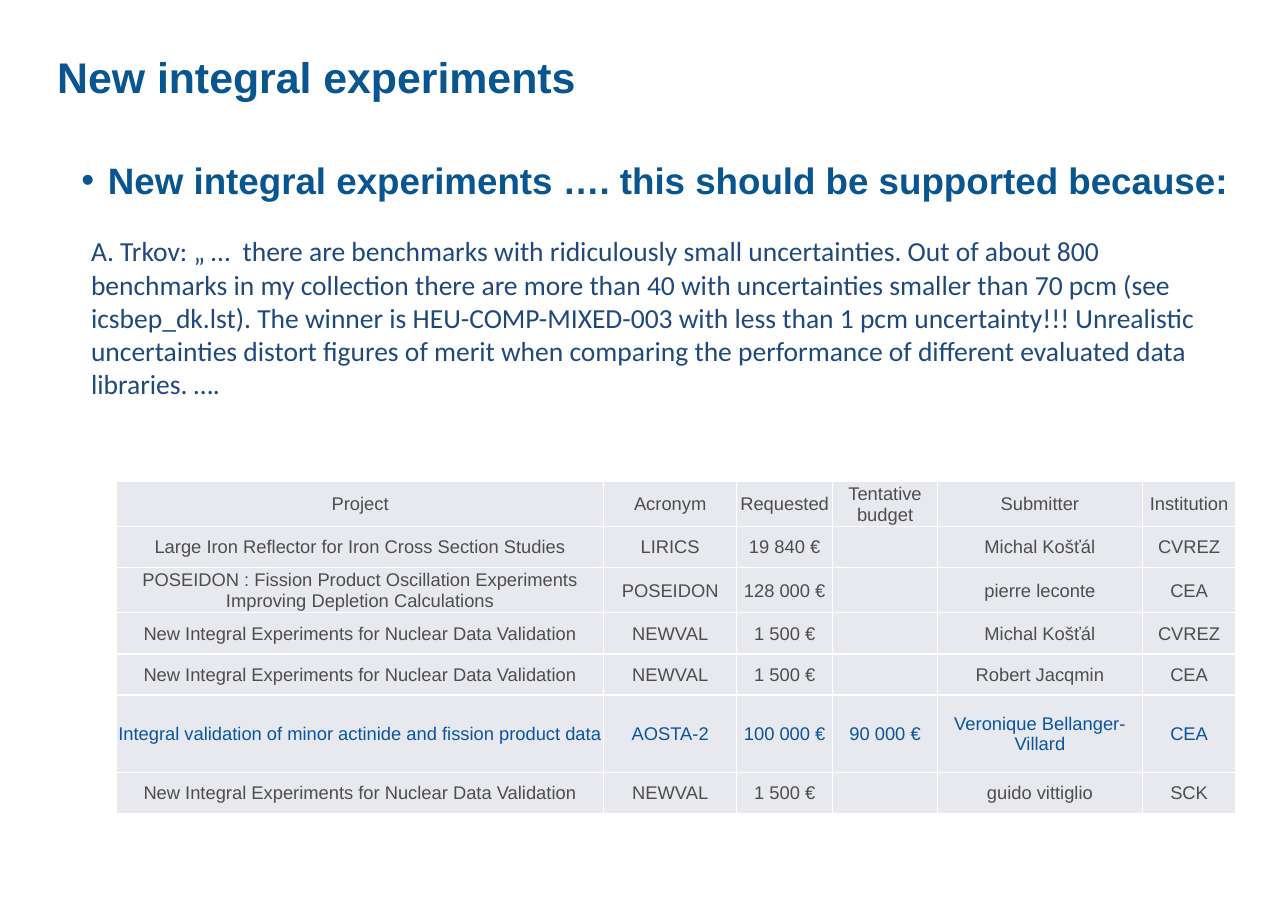
import dataclasses

import lxml.etree
import pptx
import pptx.dml.color
import pptx.enum.text
import pptx.oxml.ns
import pptx.util

Cm = pptx.util.Cm
Pt = pptx.util.Pt
Color = pptx.dml.color.RGBColor.from_string
Align = pptx.enum.text.PP_ALIGN
Anchor = pptx.enum.text.MSO_ANCHOR
qualified = pptx.oxml.ns.qn


@dataclasses.dataclass(frozen=True)
class Theme:
    heading: str = "08558F"
    quote: str = "1F497D"
    cell_text: str = "4D4D4D"
    funded_text: str = "0854A0"
    cell_fill: str = "E7E9EE"
    border: str = "FFFFFF"
    title_size: int = 28
    bullet_size: int = 24
    quote_size: int = 18
    cell_size: int = 12


theme = Theme()


def write(frame, text, *, size, color, font="Arial", bold=False,
          align=Align.LEFT, anchor=Anchor.TOP, bullet=None):
    frame.word_wrap = True
    frame.vertical_anchor = anchor
    para = frame.paragraphs[0]
    para.alignment = align
    if bullet:
        properties = para._p.get_or_add_pPr()
        properties.set("marL", str(Cm(0.61)))
        properties.set("indent", str(-Cm(0.61)))
        lxml.etree.SubElement(properties, qualified("a:buFont"), typeface=font)
        lxml.etree.SubElement(properties, qualified("a:buChar"), char=bullet)
    span = para.add_run()
    span.text = text
    span.font.name = font
    span.font.size = Pt(size)
    span.font.bold = bold
    span.font.color.rgb = Color(color)


def draw_borders(cell, color, width):
    properties = cell._tc.get_or_add_tcPr()
    for side in ("lnL", "lnR", "lnT", "lnB"):
        line = lxml.etree.SubElement(properties, qualified(f"a:{side}"), w=str(width))
        fill = lxml.etree.SubElement(line, qualified("a:solidFill"))
        lxml.etree.SubElement(fill, qualified("a:srgbClr"), val=color)


deck = pptx.Presentation()
deck.slide_width = Cm(29.7)
deck.slide_height = Cm(21)
page = deck.slides.add_slide(deck.slide_layouts[6])

# Heading and quotation
title_box = page.shapes.add_textbox(Cm(1.04), Cm(1.09), Cm(24.61), Cm(1.35))
title_box.text_frame.margin_left = title_box.text_frame.margin_right = Cm(0.28)
write(title_box.text_frame, "New integral experiments", size=theme.title_size,
      color=theme.heading, bold=True, anchor=Anchor.MIDDLE)

bullet_box = page.shapes.add_textbox(Cm(1.63), Cm(3.51), Cm(27.03), Cm(1.8))
write(bullet_box.text_frame,
      "New integral experiments …. this should be supported because:",
      size=theme.bullet_size, color=theme.heading, bold=True, bullet="•")

quote_box = page.shapes.add_textbox(Cm(1.85), Cm(5.28), Cm(26.72), Cm(4.11))
write(quote_box.text_frame,
      "A. Trkov: „ …  there are benchmarks with ridiculously small uncertainties. "
      "Out of about 800 benchmarks in my collection there are more than 40 with "
      "uncertainties smaller than 70 pcm (see icsbep_dk.lst). The winner is "
      "HEU-COMP-MIXED-003 with less than 1 pcm uncertainty!!! Unrealistic "
      "uncertainties distort figures of merit when comparing the performance of "
      "different evaluated data libraries. ….",
      size=theme.quote_size, color=theme.quote, font="Calibri")

# Project table
validation = "New Integral Experiments for Nuclear Data Validation"
projects = [
    ("Project", "Acronym", "Requested", "Tentative budget", "Submitter", "Institution"),
    ("Large Iron Reflector for Iron Cross Section Studies", "LIRICS", "19 840 €", "",
     "Michal Košťál", "CVREZ"),
    ("POSEIDON : Fission Product Oscillation Experiments Improving Depletion Calculations",
     "POSEIDON", "128 000 €", "", "pierre leconte", "CEA"),
    (validation, "NEWVAL", "1 500 €", "", "Michal Košťál", "CVREZ"),
    (validation, "NEWVAL", "1 500 €", "", "Robert Jacqmin", "CEA"),
    ("Integral validation of minor actinide and fission product data", "AOSTA-2",
     "100 000 €", "90 000 €", "Veronique Bellanger-Villard", "CEA"),
    (validation, "NEWVAL", "1 500 €", "", "guido vittiglio", "SCK"),
]
column_widths = [11.23, 3.07, 2.21, 2.42, 4.72, 2.16]
row_heights = [1.03, 0.95, 1.03, 0.95, 0.95, 1.78, 0.95]
funded_row = 5

table = page.shapes.add_table(
    len(projects), len(column_widths), Cm(2.69), Cm(11.1),
    Cm(sum(column_widths)), Cm(sum(row_heights))).table
for column, width in zip(table.columns, column_widths):
    column.width = Cm(width)

for row_index, (row, height, values) in enumerate(zip(table.rows, row_heights, projects)):
    row.height = Cm(height)
    color = theme.funded_text if row_index == funded_row else theme.cell_text
    for cell, value in zip(row.cells, values):
        draw_borders(cell, theme.border, Pt(1))
        cell.fill.solid()
        cell.fill.fore_color.rgb = Color(theme.cell_fill)
        cell.margin_left = cell.margin_right = cell.margin_top = Cm(0.02)
        cell.margin_bottom = 0
        cell.vertical_anchor = Anchor.MIDDLE
        if value:
            write(cell.text_frame, value, size=theme.cell_size, color=color,
                  align=Align.CENTER, anchor=None)

deck.save("out.pptx")
